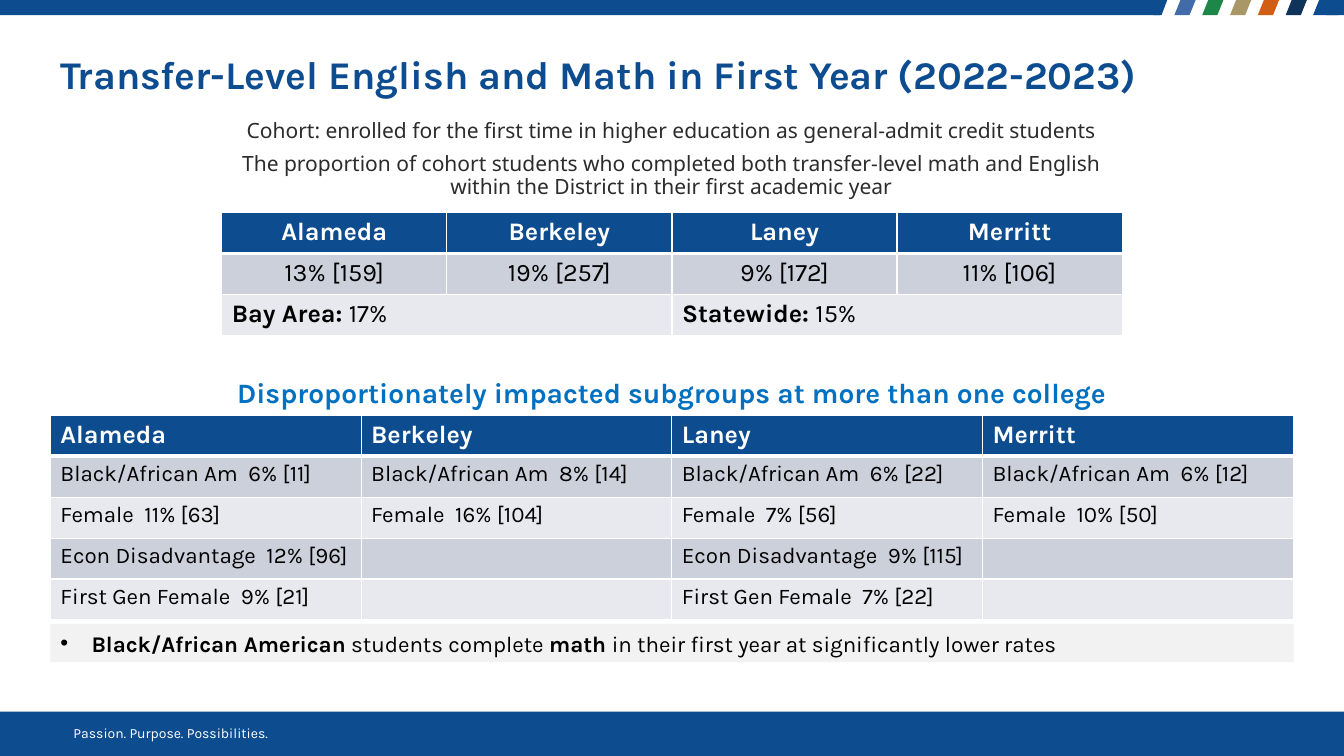
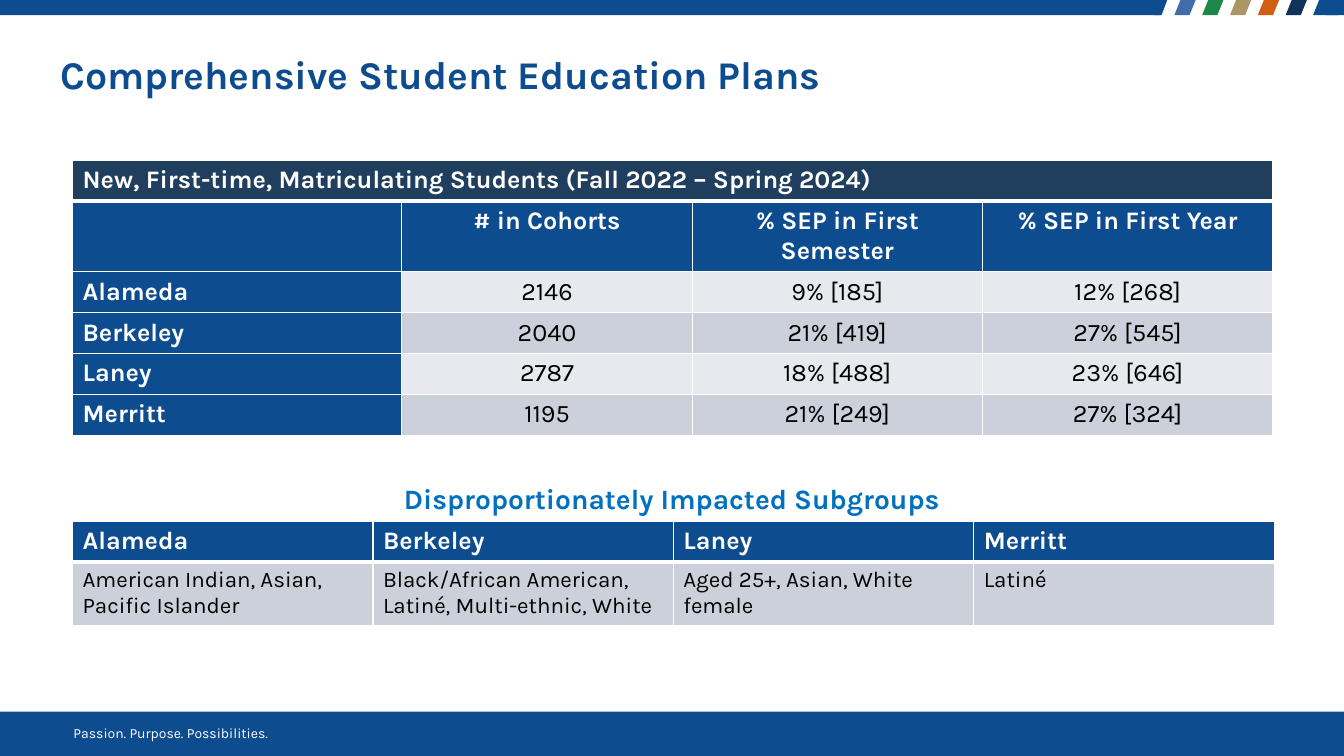
import dataclasses

import pptx
import pptx.dml.color
import pptx.enum.shapes
import pptx.enum.text
import pptx.oxml
import pptx.oxml.ns
import pptx.util

Pt = pptx.util.Pt
Rgb = pptx.dml.color.RGBColor.from_string
Form = pptx.enum.shapes.MSO_SHAPE
Align = pptx.enum.text.PP_ALIGN
Anchor = pptx.enum.text.MSO_ANCHOR


@dataclasses.dataclass(frozen=True)
class Theme:
    blue: str = "0E4C90"
    navy: str = "203F5E"
    sky: str = "0070C0"
    white: str = "FFFFFF"
    black: str = "000000"
    ink: str = "2C2C2C"
    dark: str = "CCD0DB"
    light: str = "E7E9EE"
    pale: str = "F2F2F2"
    stripes: tuple = ("416BA9", "1D8649", "AA9767", "D15E14", "103459")
    font: str = "Karla"
    plain: str = "Noto Sans"
    title: int = 28
    label: int = 20
    head: int = 18
    body: int = 16
    intro: int = 15
    foot: int = 10


look = Theme()
deck = pptx.Presentation()
deck.slide_width = pptx.util.Inches(13.333)
deck.slide_height = pptx.util.Inches(7.5)


def spot(x, y, w, h):
    """Turn percentages of the slide into left, top, width and height."""
    wide, high = deck.slide_width, deck.slide_height
    return [round(part * side / 100) for part, side in zip((x, y, w, h), (wide, high) * 2)]


def write(par, text, size, color, bold=False, font=look.font):
    """Add text run by run; parts between asterisks are bold."""
    for i, part in enumerate(text.split("*")):
        if part:
            run = par.add_run()
            run.text = part
            run.font.name, run.font.size = font, Pt(size)
            run.font.bold = bold or i % 2 == 1
            run.font.color.rgb = Rgb(color)


# Row kinds: fill, text colour, bold, width of the lower border
kinds = {
    "top": (look.navy, look.white, True, 3),
    "head": (look.blue, look.white, True, 3),
    "side": (look.blue, look.white, True, 1),
    "dark": (look.dark, look.black, False, 1),
    "light": (look.light, look.black, False, 1),
}
schools = ("head", ["Alameda", "Berkeley", "Laney", "Merritt"])
row = 5.42

# Tables: left, top, column widths, row heights, body size, first centred column, rows
pages = [
    {
        "title": "Transfer-Level English and Math in First Year (2022-2023)",
        "high": 16.27,
        "label": ("Disproportionately impacted subgroups at more than one college", 49.07),
        "tables": [
            (3.75, 54.93, [23.12] * 4, [row] * 5, look.body, 4, [
                schools,
                ("dark", ["Black/African Am  6% [11]", "Black/African Am  8% [14]",
                          "Black/African Am  6% [22]", "Black/African Am  6% [12]"]),
                ("light", ["Female  11% [63]", "Female  16% [104]",
                           "Female  7% [56]", "Female  10% [50]"]),
                ("dark", ["Econ Disadvantage  12% [96]", "", "Econ Disadvantage  9% [115]", ""]),
                ("light", ["First Gen Female  9% [21]", "", "First Gen Female  7% [22]", ""]),
            ]),
            (16.5, 28.13, [16.75] * 4, [row] * 3, look.head, 0, [
                schools,
                ("dark", ["13% [159]", "19% [257]", "9% [172]", "11% [106]"]),
                ("light", ["*Bay Area: *17%", None, "*Statewide: *15%", None]),
            ]),
        ],
    },
    {
        "title": "Comprehensive Student Education Plans",
        "high": 9.2,
        "label": ("Disproportionately Impacted Subgroups", 63.07),
        "tables": [
            (5.4, 21.2, [24.5] + [21.6] * 3, [row, 9] + [row] * 4, look.head, 1, [
                ("top", ["New, First-time, Matriculating Students (Fall 2022 – Spring 2024)",
                         None, None, None]),
                ("side", ["", "# in Cohorts", "% SEP in First Semester", "% SEP in First Year"]),
                ("light", ["Alameda", "2146", "9% [185]", "12% [268]"]),
                ("dark", ["Berkeley", "2040", "21% [419]", "27% [545]"]),
                ("light", ["Laney", "2787", "18% [488]", "23% [646]"]),
                ("dark", ["Merritt", "1195", "21% [249]", "27% [324]"]),
            ]),
            (5.4, 68.93, [22.35] * 4, [row, 8.2], look.body, 4, [
                schools,
                ("dark", ["American Indian, Asian, Pacific Islander",
                          "Black/African American, Latiné, Multi-ethnic, White",
                          "Aged 25+, Asian, White female", "Latiné"]),
            ]),
        ],
    },
]

layout = deck.slide_layouts[5]
for holder in list(layout.placeholders)[1:]:
    holder.element.getparent().remove(holder.element)
slides = [deck.slides.add_slide(layout) for page in pages]

# Shared bands and footer: drawn once, then moved to the layout
first = slides[0].shapes
bands = [
    (Form.RECTANGLE, 0, 94.13, 100, 5.87, look.blue),
    (Form.RECTANGLE, 0, 0, 86.33, 2, look.blue),
    (Form.PARALLELOGRAM, 85.8, 0, 1.05, 2, look.blue),
    (Form.PARALLELOGRAM, 97.7, 0, 2.3, 2, look.blue),
    (Form.RECTANGLE, 98.7, 0, 1.3, 2, look.blue),
]
bands += [(Form.PARALLELOGRAM, 87.38 + 2.07 * i, 0, 1.58, 2, color)
          for i, color in enumerate(look.stripes)]
marks = []
for form, x, y, w, h, color in bands:
    band = first.add_shape(form, *spot(x, y, w, h))
    band.shadow.inherit = False
    band.fill.solid()
    band.fill.fore_color.rgb = Rgb(color)
    band.line.fill.background()
    if form == Form.PARALLELOGRAM:
        band.adjustments[0] = 0.4
    marks.append(band)
foot = first.add_textbox(*spot(4.73, 95.2, 26.55, 3.6))
foot.text_frame.word_wrap = True
write(foot.text_frame.paragraphs[0], "Passion. Purpose. Possibilities.", look.foot, look.white)
marks.append(foot)
for i, mark in enumerate(marks):
    mark.element.nvSpPr.cNvPr.id = 20 + i
    layout.shapes.element.append(mark.element)

for page, slide in zip(pages, slides):
    title = slide.shapes.title
    title.left, title.top, title.width, title.height = spot(3.75, 6.67, 92.5, page["high"])
    frame = title.text_frame
    frame.word_wrap = True
    frame.auto_size = pptx.enum.text.MSO_AUTO_SIZE.NONE
    frame.vertical_anchor = Anchor.TOP
    par = frame.paragraphs[0]
    par.alignment, par.line_spacing = Align.LEFT, 0.9
    write(par, page["title"], look.title, look.blue, True)

    text, y = page["label"]
    label = slide.shapes.add_textbox(*spot(14.25, y, 71.5, 5.87))
    label.text_frame.word_wrap = True
    par = label.text_frame.paragraphs[0]
    par.alignment = Align.CENTER
    write(par, text, look.label, look.sky, True)

    for x, y, wides, highs, size, mid, rows in page["tables"]:
        place = spot(x, y, sum(wides), sum(highs))
        table = slide.shapes.add_table(len(highs), len(wides), *place).table
        table.horz_banding = False
        for col, wide in zip(table.columns, wides):
            col.width = spot(0, 0, wide, 0)[2]
        for r, (kind, texts) in enumerate(rows):
            table.rows[r].height = spot(0, 0, 0, highs[r])[3]
            for c, text in enumerate(texts):
                cell = table.cell(r, c)
                side = mid == 1 and c == 0 and kind != "top"
                fill, color, bold, edge = kinds["side" if side else kind]
                cell.fill.solid()
                cell.fill.fore_color.rgb = Rgb(fill)
                props = cell._tc.get_or_add_tcPr()
                for i, name in enumerate("LRB" if r else "LRTB"):
                    width = Pt(edge if name == "B" else 1)
                    props.insert(i, pptx.oxml.parse_xml(
                        f'<a:ln{name} {pptx.oxml.ns.nsdecls("a")} w="{width}"><a:solidFill>'
                        f'<a:srgbClr val="{look.white}"/></a:solidFill></a:ln{name}>'))
                if not text:
                    continue
                span = c + 1
                while span < len(texts) and texts[span] is None:
                    span += 1
                if span > c + 1:
                    cell.merge(table.cell(r, span - 1))
                par = cell.text_frame.paragraphs[0]
                par.alignment = Align.CENTER if c >= mid and span == c + 1 else Align.LEFT
                write(par, text, look.head if bold else size, color, bold)

# Cohort note above the first table
intro = slides[0].shapes.add_textbox(*spot(9.23, 15.33, 81.45, 12.8)).text_frame
intro.word_wrap = True
notes = [
    ["Cohort: enrolled for the first time in higher education as general-admit credit students"],
    ["The proportion of cohort students who completed both transfer-level math and English",
     "within the District in their first academic year"],
]
for i, lines in enumerate(notes):
    par = intro.add_paragraph() if i else intro.paragraphs[0]
    par.alignment, par.line_spacing = Align.CENTER, 0.9
    if i:
        par.space_before = Pt(7)
    for n, line in enumerate(lines):
        if n:
            par.add_line_break()
        write(par, line, look.intro, look.ink, font=look.plain)

# Bulleted finding below the subgroups
box = slides[0].shapes.add_shape(Form.RECTANGLE, *spot(3.75, 82.53, 92.5, 5.07))
box.shadow.inherit = False
box.fill.solid()
box.fill.fore_color.rgb = Rgb(look.pale)
box.line.fill.background()
box.text_frame.word_wrap = True
box.text_frame.vertical_anchor = Anchor.MIDDLE
par = box.text_frame.paragraphs[0]
par.alignment = Align.LEFT
props = par._p.get_or_add_pPr()
indent = pptx.util.Inches(0.31)
props.set("marL", str(indent))
props.set("indent", str(-indent))
ns = pptx.oxml.ns.nsdecls("a")
props.append(pptx.oxml.parse_xml(f'<a:buClr {ns}><a:srgbClr val="{look.black}"/></a:buClr>'))
props.append(pptx.oxml.parse_xml(f'<a:buFont {ns} typeface="Arial"/>'))
props.append(pptx.oxml.parse_xml(f'<a:buChar {ns} char="•"/>'))
write(par, "*Black/African American* students complete *math *"
      "in their first year at significantly lower rates", look.body, look.black)

deck.save("out.pptx")
